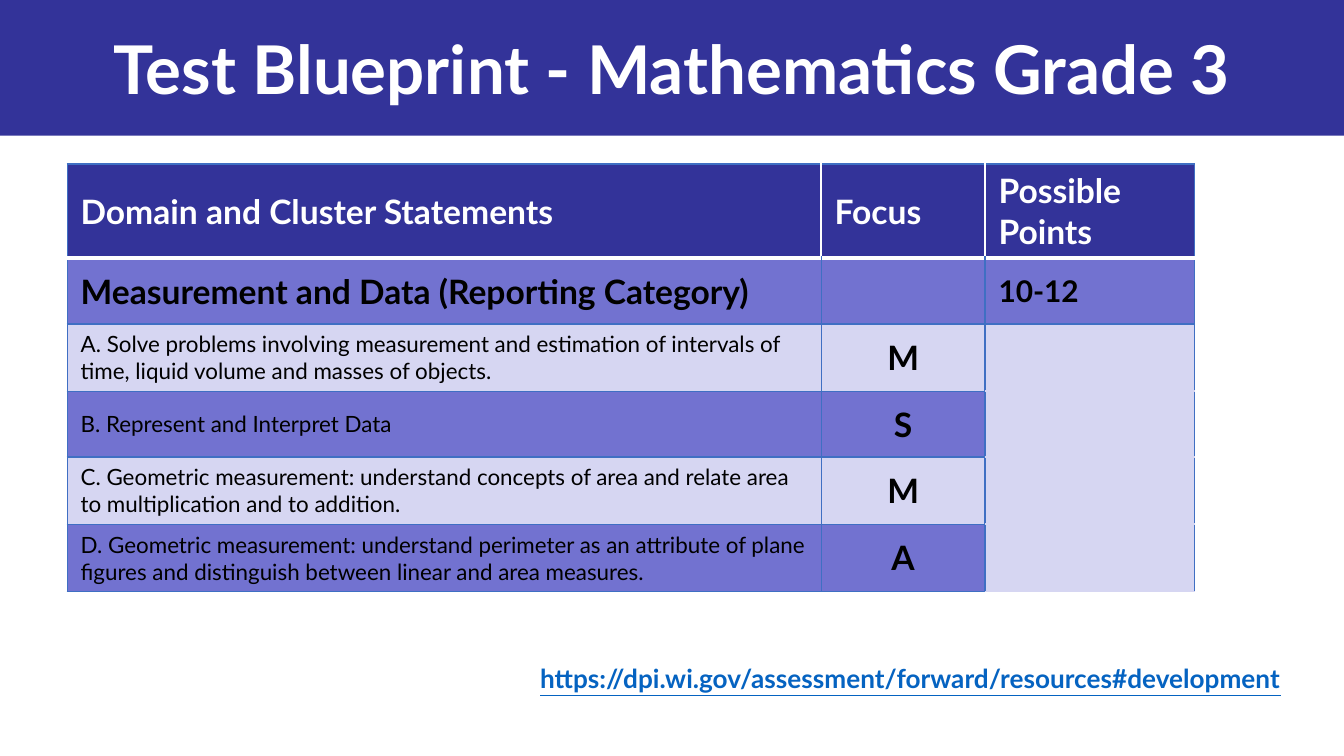
from dataclasses import dataclass

from lxml.etree import SubElement
from pptx import Presentation
from pptx.dml.color import RGBColor
from pptx.enum.shapes import MSO_SHAPE
from pptx.enum.text import MSO_ANCHOR, PP_ALIGN
from pptx.oxml.ns import qn
from pptx.util import Inches, Pt


@dataclass(frozen=True)
class Theme:
    """Colours, font and type sizes of the slide."""
    font: str = "Lato"
    navy: str = "333399"
    band: str = "7272D0"
    pale: str = "D6D6F2"
    rule: str = "3F6FC3"
    link: str = "0563C1"
    white: str = "FFFFFF"
    black: str = "000000"
    title: int = 36
    head: int = 18
    points: int = 16
    url: int = 14
    body: int = 12


THEME = Theme()
HEADS = ["Domain and Cluster Statements", "Focus", "Possible Points"]
GROUP = ["Measurement and Data (Reporting Category)", "", "10-12"]
CLUSTERS = [
    ("A. Solve problems involving measurement and estimation of intervals of "
     "time, liquid volume and masses of objects.", "M"),
    ("B. Represent and Interpret Data", "S"),
    ("C. Geometric measurement: understand concepts of area and relate area "
     "to multiplication and to addition.", "M"),
    ("D. Geometric measurement: understand perimeter as an attribute of plane "
     "figures and distinguish between linear and area measures.", "A"),
]


def write(frame, text, size, color, bold=True, align=PP_ALIGN.LEFT):
    """Put one styled paragraph in a text frame and return its font."""
    frame.word_wrap = True
    frame.text = text
    line = frame.paragraphs[0]
    line.alignment = align
    font = line.runs[0].font if line.runs else line.font
    font.name, font.size, font.bold = THEME.font, Pt(size), bold
    font.color.rgb = RGBColor.from_string(color)
    return font


def edge(cell, side, color, width):
    """Draw one border of a cell."""
    line = SubElement(cell._tc.get_or_add_tcPr(), qn(f"a:ln{side}"), w=str(Pt(width)))
    fill = SubElement(line, qn("a:solidFill"))
    SubElement(fill, qn("a:srgbClr"), val=color)


def paint(cell, fill, edges):
    """Give a cell its borders, fill and anchor."""
    for side in "LRTB":
        edge(cell, side, *edges.get(side, (THEME.rule, 0.75)))
    cell.fill.solid()
    cell.fill.fore_color.rgb = RGBColor.from_string(fill)
    cell.vertical_anchor = MSO_ANCHOR.MIDDLE


def add_title(slide, left, top, width, height):
    """Add the title on its full-width bar."""
    bar = slide.shapes.add_shape(MSO_SHAPE.RECTANGLE, left, top, width, height)
    bar.shadow.inherit = False
    bar.fill.solid()
    bar.fill.fore_color.rgb = RGBColor.from_string(THEME.navy)
    bar.line.fill.background()
    frame = slide.shapes.add_textbox(left, top, width, height).text_frame
    frame.vertical_anchor = MSO_ANCHOR.MIDDLE
    write(frame, "Test Blueprint - Mathematics Grade 3", THEME.title,
          THEME.white, align=PP_ALIGN.CENTER)


def add_grid(slide, left, top, width, height):
    """Add the table of clusters, focus and points."""
    count = len(CLUSTERS) + 2
    table = slide.shapes.add_table(count, 3, left, top, width, height).table
    focus, points = Inches(1.22), Inches(1.56)
    for col, size in zip(table.columns, (width - focus - points, focus, points)):
        col.width = size
    for row in table.rows:
        row.height = Inches(0.49)
    table.rows[0].height = Inches(0.7)

    thin, thick = (THEME.white, 1), (THEME.white, 2)
    for col, text in enumerate(HEADS):
        edges = {"B": thick}
        if col > 0:
            edges["L"] = thin
        if col < 2:
            edges["R"] = thin
        cell = table.cell(0, col)
        paint(cell, THEME.navy, edges)
        write(cell.text_frame, text, THEME.head, THEME.white)

    for col, text in enumerate(GROUP):
        cell = table.cell(1, col)
        paint(cell, THEME.band, {"T": thick})
        size = THEME.points if col == 2 else THEME.head
        write(cell.text_frame, text, size, THEME.black)

    blend = (THEME.pale, 1)
    for row, (text, mark) in enumerate(CLUSTERS, 2):
        name, sign, blank = (table.cell(row, col) for col in range(3))
        fill = THEME.band if row % 2 else THEME.pale
        paint(name, fill, {})
        write(name.text_frame, text, THEME.body, THEME.black, bold=False)
        paint(sign, fill, {})
        write(sign.text_frame, mark, THEME.head, THEME.black, align=PP_ALIGN.CENTER)
        paint(blank, THEME.pale, {"B": blend} if row == 2 else {"T": blend, "B": blend})


def add_link(slide, left, top, width, height):
    """Add the underlined web address."""
    frame = slide.shapes.add_textbox(left, top, width, height).text_frame
    frame.margin_left = frame.margin_right = Inches(0.1)
    frame.margin_top = frame.margin_bottom = Inches(0.1)
    font = write(frame, "https://dpi.wi.gov/assessment/forward/resources#development",
                 THEME.url, THEME.link)
    font.underline = True


def main():
    """Build and save the slide."""
    deck = Presentation()
    deck.slide_width = Inches(10)
    deck.slide_height = deck.slide_width * 9 // 16
    slide = deck.slides.add_slide(deck.slide_layouts[6])
    add_title(slide, 0, 0, deck.slide_width, Inches(1.01))
    add_grid(slide, Inches(0.5), Inches(1.22), Inches(8.39), Inches(3.18))
    add_link(slide, Inches(3.92), Inches(4.83), Inches(5.83), Inches(0.44))
    deck.save("out.pptx")


if __name__ == "__main__":
    main()
